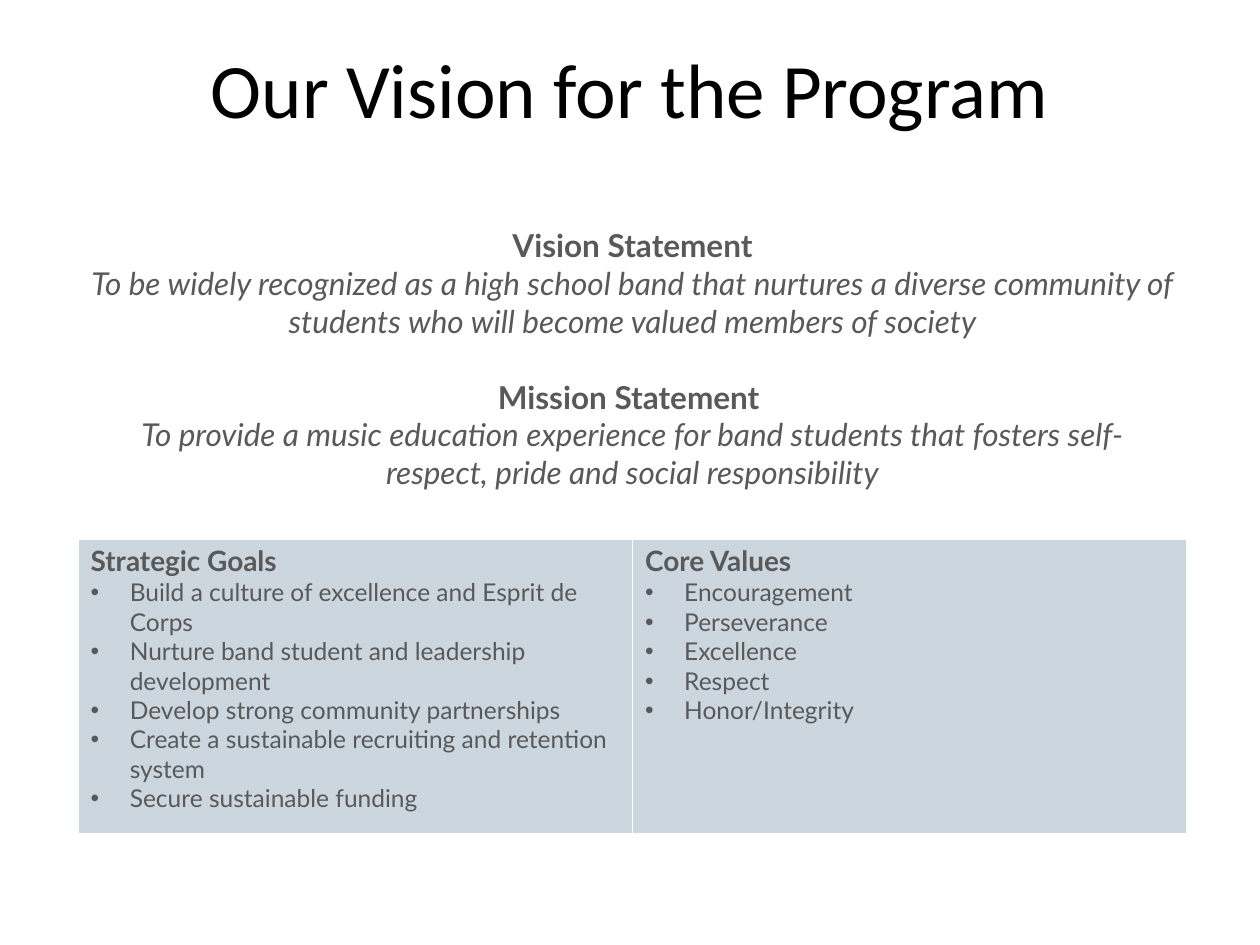
from lxml.etree import SubElement
from pptx import Presentation
from pptx.dml.color import RGBColor
from pptx.enum.text import MSO_ANCHOR as ANCHOR, PP_ALIGN as ALIGN
from pptx.oxml.ns import qn
from pptx.util import Inches, Pt

prs = Presentation()
prs.slide_width, prs.slide_height = Inches(10), Inches(7.5)
W, H = prs.slide_width / 100, prs.slide_height / 100
s = prs.slides.add_slide(prs.slide_layouts[6])
GREY, PANEL, WHITE = "595959", "CBD6DF", "FFFFFF"


def add_text(tf, text, size=18, font="Lato", color=GREY, bold=False, italic=False,
             align=ALIGN.LEFT, before=0, spacing=1.0, bullet=False):
    p = tf.paragraphs[0] if not tf.text else tf.add_paragraph()
    p.alignment, p.line_spacing, p.space_before = align, spacing, Pt(before)
    r = p.add_run()
    r.text = text
    r.font.size, r.font.name = Pt(size), font
    r.font.bold, r.font.italic = bold, italic
    r.font.color.rgb = RGBColor.from_string(color)
    if bullet:
        pPr = p._p.get_or_add_pPr()
        indent = Inches(0.31)
        pPr.set("marL", str(indent))
        pPr.set("indent", str(-indent))
        SubElement(SubElement(pPr, qn("a:buClr")), qn("a:srgbClr"), val=color)
        SubElement(pPr, qn("a:buFont"), typeface="Arial")
        SubElement(pPr, qn("a:buChar"), char="•")


def add_borders(cell, bottom):
    tcPr = cell._tc.get_or_add_tcPr()
    for side, width in (("L", 1), ("R", 1), ("T", 1), ("B", bottom)):
        ln = SubElement(tcPr, qn(f"a:ln{side}"), w=str(Pt(width)))
        SubElement(SubElement(ln, qn("a:solidFill")), qn("a:srgbClr"), val=WHITE)


title = s.shapes.add_textbox(int(6 * W), int(1.6 * H), int(88 * W), int(13.33 * H))
tf = title.text_frame
tf.word_wrap, tf.vertical_anchor = True, ANCHOR.BOTTOM
add_text(tf, "Our Vision for the Program", size=44, font="Calibri", color="000000",
         align=ALIGN.CENTER, spacing=0.9)

table = s.shapes.add_table(2, 2, int(6.2 * W), int(23.33 * H), int(88 * W), int(64.93 * H)).table
table.first_row = table.horz_banding = False
for row, share in zip(table.rows, (33.6, 31.33)):
    row.height = int(share * H)
for i, row in enumerate(table.rows):
    for cell in row.cells:
        add_borders(cell, bottom=(3, 1)[i])
        if i == 0:
            cell.fill.background()
        else:
            cell.fill.solid()
            cell.fill.fore_color.rgb = RGBColor.from_string(PANEL)

table.cell(0, 0).merge(table.cell(0, 1))
statements = [
    ("Vision Statement", "To be widely recognized as a high school band that nurtures a diverse "
     "community of students who will become valued members of society"),
    ("Mission Statement ", "To provide a music education experience for band students that "
     "fosters self-respect, pride and social responsibility"),
]
tf = table.cell(0, 0).text_frame
for i, (heading, statement) in enumerate(statements):
    add_text(tf, heading, bold=True, align=ALIGN.CENTER, before=21.6 * i)
    add_text(tf, statement, italic=True, align=ALIGN.CENTER)

lists = [
    ("Strategic Goals", ["Build a culture of excellence and Esprit de Corps",
                         "Nurture band student and leadership development",
                         "Develop strong community partnerships",
                         "Create a sustainable recruiting and retention system",
                         "Secure sustainable funding"]),
    ("Core Values", ["Encouragement", "Perseverance", "Excellence", "Respect",
                     "Honor/Integrity"]),
]
for col, (heading, items) in enumerate(lists):
    tf = table.cell(1, col).text_frame
    add_text(tf, heading, size=16, bold=True)
    for item in items:
        add_text(tf, item, size=14, bullet=True)

prs.save("out.pptx")
